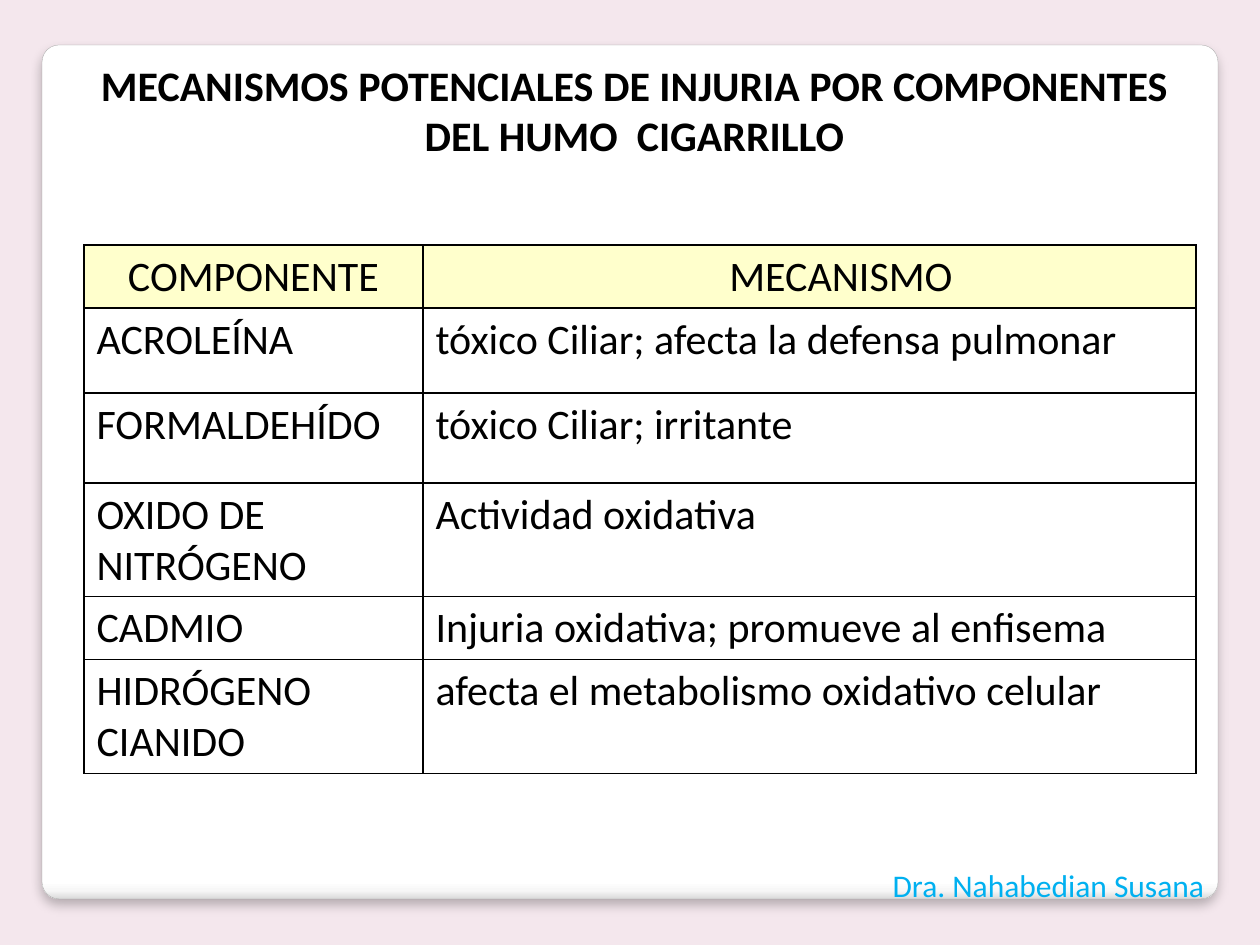
from lxml import etree
from pptx import Presentation
from pptx.dml.color import RGBColor
from pptx.enum.shapes import MSO_SHAPE as Shape
from pptx.enum.text import MSO_ANCHOR as Anchor, MSO_AUTO_SIZE as AutoSize, PP_ALIGN as Align
from pptx.oxml import parse_xml
from pptx.oxml.ns import nsdecls, qn
from pptx.util import Pt

EMU_PER_PX = 914400 / 126
FONT = "Calibri"
COLORS = {
    "background": "F4E7ED", "white": "FFFFFF", "near_white": "F7F7F7",
    "edge": "DADADA", "outline": "A4A4A4", "black": "000000",
    "header": "FFFFCC", "author": "00B0F0",
}
COLUMN_WIDTHS = [339, 773]
ROW_HEIGHTS = [63, 85, 90, 113, 63, 114]
ROWS = [
    ("COMPONENTE", "\tMECANISMO"),
    ("ACROLEÍNA", "tóxico Ciliar; afecta la defensa pulmonar"),
    ("FORMALDEHÍDO", "tóxico Ciliar; irritante"),
    ("OXIDO DE NITRÓGENO", "Actividad oxidativa"),
    ("CADMIO", "Injuria oxidativa; promueve al enfisema"),
    ("HIDRÓGENO CIANIDO", "afecta el metabolismo oxidativo celular"),
]


def px(length):
    return round(length * EMU_PER_PX)


def rgb(name):
    return RGBColor.from_string(COLORS[name])


def write_text(frame, text, size=24, color="black", bold=False, align=Align.LEFT):
    paragraph = frame.paragraphs[0]
    paragraph.alignment = align
    run = paragraph.add_run()
    run.text = text
    run.font.name = FONT
    run.font.size = Pt(size)
    run.font.bold = bold
    run.font.color.rgb = rgb(color)


def add_card(slide, box):
    """Place the rounded panel with its soft shadow behind everything else."""
    card = slide.shapes.add_shape(Shape.ROUNDED_RECTANGLE, *map(px, box))
    card.adjustments[0] = 0.02
    card.line.color.rgb = rgb("outline")
    card.line.width = Pt(0.16)
    stops = [(0, "white"), (98, "white"), (99, "near_white"), (100, "edge")]
    stop_xml = "".join(
        f'<a:gs pos="{position * 1000}"><a:srgbClr val="{COLORS[name]}"/></a:gs>'
        for position, name in stops)
    properties = card._element.spPr
    properties.find(qn("a:prstGeom")).addnext(parse_xml(
        f'<a:gradFill {nsdecls("a")}><a:gsLst>{stop_xml}</a:gsLst>'
        '<a:lin ang="5400000" scaled="0"/></a:gradFill>'))
    properties.append(parse_xml(
        f'<a:effectLst {nsdecls("a")}><a:outerShdw blurRad="{Pt(6)}" dist="{Pt(4)}" '
        f'dir="5400000" rotWithShape="0"><a:srgbClr val="{COLORS["black"]}">'
        '<a:alpha val="25000"/></a:srgbClr></a:outerShdw></a:effectLst>'))
    slide.shapes._spTree.insert(2, card._element)


def place_title(slide, box, text):
    title = slide.shapes.title
    title.left, title.top, title.width, title.height = map(px, box)
    title.fill.solid()
    title.fill.fore_color.rgb = rgb("white")
    color = title._element.spPr.find(qn("a:solidFill"))[0]
    etree.SubElement(color, qn("a:alpha")).set("val", "85000")
    frame = title.text_frame
    frame.word_wrap = True
    frame.auto_size = AutoSize.SHAPE_TO_FIT_TEXT
    frame.vertical_anchor = Anchor.TOP
    write_text(frame, text, bold=True, align=Align.CENTER)


def set_borders(cell):
    properties = cell._tc.get_or_add_tcPr()
    for index, side in enumerate(("lnL", "lnR", "lnT", "lnB")):
        properties.insert(index, parse_xml(
            f'<a:{side} {nsdecls("a")} w="{Pt(1)}"><a:solidFill>'
            f'<a:srgbClr val="{COLORS["black"]}"/></a:solidFill></a:{side}>'))


def add_mechanism_table(slide, left, top):
    table = slide.shapes.add_table(
        len(ROWS), len(COLUMN_WIDTHS), px(left), px(top),
        px(sum(COLUMN_WIDTHS)), px(sum(ROW_HEIGHTS))).table
    for column, width in zip(table.columns, COLUMN_WIDTHS):
        column.width = px(width)
    for row_index, (row, height, texts) in enumerate(zip(table.rows, ROW_HEIGHTS, ROWS)):
        row.height = px(height)
        is_header = row_index == 0
        for cell, text in zip(row.cells, texts):
            if is_header:
                cell.fill.solid()
                cell.fill.fore_color.rgb = rgb("header")
            else:
                cell.fill.background()
            set_borders(cell)
            write_text(cell.text_frame, text, align=Align.CENTER if is_header else Align.LEFT)


def add_author(slide, box, name):
    frame = slide.shapes.add_textbox(*map(px, box)).text_frame
    frame.word_wrap = False
    frame.auto_size = AutoSize.SHAPE_TO_FIT_TEXT
    write_text(frame, name, size=18, color="author", align=Align.CENTER)


def main():
    presentation = Presentation()
    presentation.slide_width, presentation.slide_height = px(1260), px(945)
    slide = presentation.slides.add_slide(presentation.slide_layouts[5])
    slide.background.fill.solid()
    slide.background.fill.fore_color.rgb = rgb("background")
    add_card(slide, (42, 45, 1176, 854))
    place_title(slide, (88, 53, 1093, 115),
                "MECANISMOS POTENCIALES DE INJURIA POR COMPONENTES DEL HUMO  CIGARRILLO")
    add_mechanism_table(slide, 84, 245)
    add_author(slide, (878, 860, 341, 50), "Dra. Nahabedian Susana")
    presentation.save("out.pptx")


if __name__ == "__main__":
    main()
